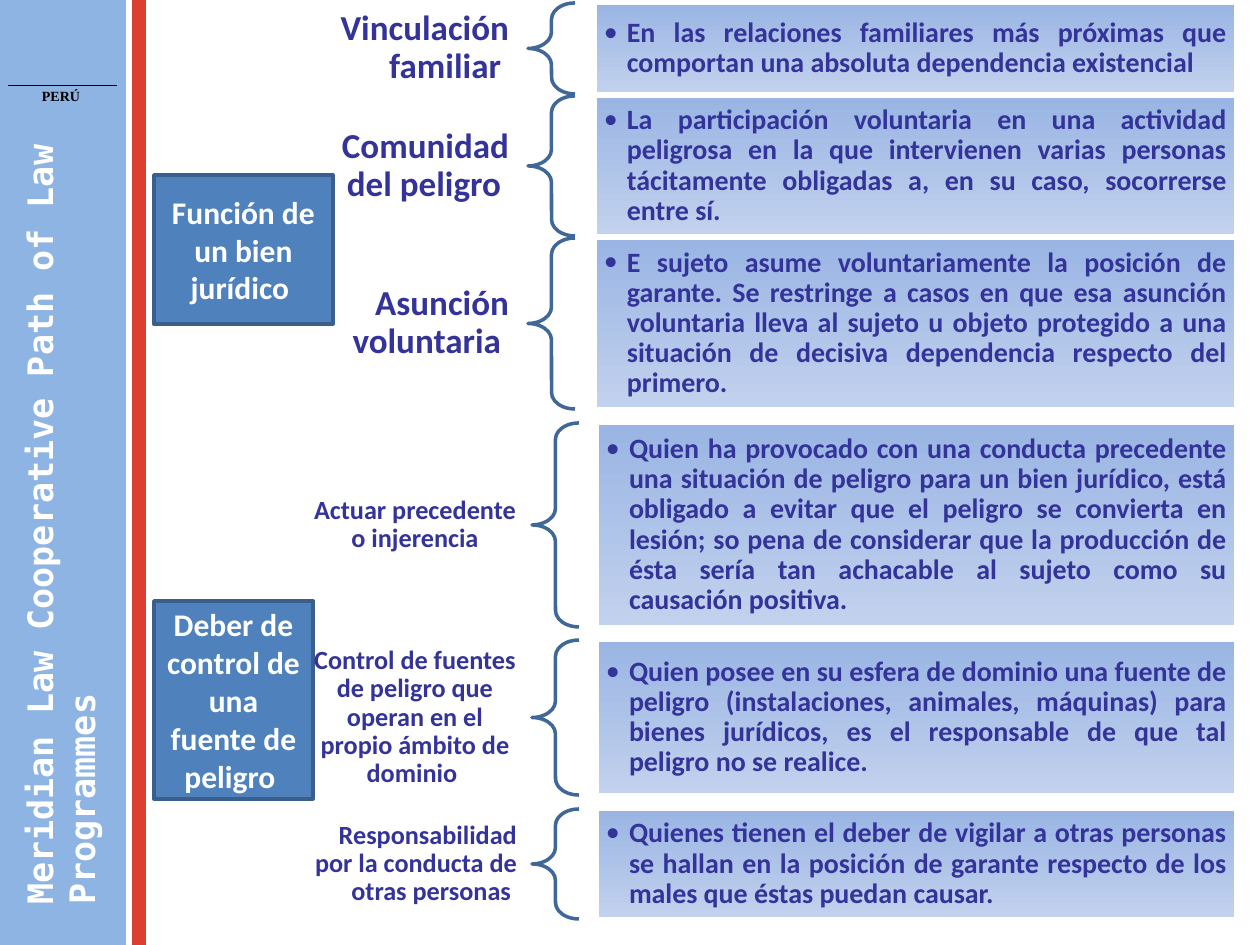
from lxml.etree import SubElement
from pptx import Presentation
from pptx.dml.color import RGBColor
from pptx.enum.shapes import MSO_CONNECTOR, MSO_SHAPE
from pptx.enum.text import MSO_ANCHOR, PP_ALIGN
from pptx.oxml.ns import qn
from pptx.util import Pt

PX = 914400 / 126
SLIDE_W, SLIDE_H = 1260, 945
INK, WHITE, BLACK = "333399", "FFFFFF", "000000"
SKY, RED, BLUE, BLUE_EDGE, BRACE = "8EB4E3", "DC3E32", "4F81BD", "3A5F8C", "3F6797"
PANEL_TOP, PANEL_BOTTOM = "9AB5E4", "C2D1ED"
LEFT, CENTER, RIGHT, JUSTIFY = PP_ALIGN.LEFT, PP_ALIGN.CENTER, PP_ALIGN.RIGHT, PP_ALIGN.JUSTIFY

ORGANIZATION = "Meridian Law Cooperative Path of Law Programmes"
COUNTRY = "PERÚ"

# Each group: duty box, columns as (left, width), label format,
# rows as (top, height, label height, label alignment, label, explanation)
GROUPS = [
    {
        "duty": "Función de un bien jurídico ",
        "duty_box": (154, 175, 179, 149),
        "label": (293, 236), "brace": (528, 47), "panel": (595, 641),
        "size": 20, "inset": (20, 8),
        "rows": [
            (3, 91, 91, RIGHT, "Vinculación familiar ",
             "En las relaciones familiares más próximas que comportan una absoluta "
             "dependencia existencial "),
            (96, 140, 91, RIGHT, "Comunidad del peligro ",
             "La participación voluntaria en una actividad peligrosa en la que "
             "intervienen varias personas tácitamente obligadas a, en su caso, "
             "socorrerse entre sí."),
            (238, 171, 91, RIGHT, "Asunción voluntaria ",
             "E sujeto asume voluntariamente la posición de garante. Se restringe a "
             "casos en que esa asunción voluntaria lleva al sujeto u objeto protegido "
             "a una situación de decisiva dependencia respecto del primero."),
        ],
    },
    {
        "duty": "Deber de control de una fuente de peligro ",
        "duty_box": (154, 601, 159, 198),
        "label": (298, 234), "brace": (532, 47), "panel": (597, 639),
        "size": 15, "inset": (15, 5),
        "rows": [
            (423, 204, 71, CENTER, "Actuar precedente o injerencia",
             "Quien ha provocado con una conducta precedente una situación de peligro "
             "para un bien jurídico, está obligado a evitar que el peligro se "
             "convierta en lesión; so pena de considerar que la producción de ésta "
             "sería tan achacable al sujeto como su causación positiva."),
            (640, 155, 155, CENTER,
             "Control de fuentes de peligro que operan en el propio ámbito de dominio ",
             "Quien posee en su esfera de dominio una fuente de peligro "
             "(instalaciones, animales, máquinas) para bienes jurídicos, es el "
             "responsable de que tal peligro no se realice."),
            (809, 110, 97, RIGHT, "Responsabilidad por la conducta de otras personas ",
             "Quienes tienen el deber de vigilar a otras personas se hallan en la "
             "posición de garante respecto de los males que éstas puedan causar."),
        ],
    },
]


def px(*lengths):
    return [round(length * PX) for length in lengths]


def rgb(color):
    return RGBColor.from_string(color)


def add_block(kind, box, line, fill=None):
    block = slide.shapes.add_shape(kind, *px(*box))
    block.shadow.inherit = False
    block.line.color.rgb = rgb(line)
    block.line.width = Pt(2)
    if fill is None:
        block.fill.background()
    elif isinstance(fill, tuple):
        block.fill.gradient()
        block.fill.gradient_angle = 270
        for stop, color in zip(block.fill.gradient_stops, fill):
            stop.color.rgb = rgb(color)
    else:
        block.fill.solid()
        block.fill.fore_color.rgb = rgb(fill)
    return block


def add_text_box(box):
    return slide.shapes.add_textbox(*px(*box))


def write(holder, text, *, size, color=INK, font="Calibri", align=CENTER,
          anchor=MSO_ANCHOR.MIDDLE, inset=(13, 6), spacing=None, bullet_indent=0, vert=None):
    frame = holder.text_frame
    frame.word_wrap = True
    frame.vertical_anchor = anchor
    frame.margin_left = frame.margin_right = px(inset[0])[0]
    frame.margin_top = frame.margin_bottom = px(inset[1])[0]
    if vert:
        frame._txBody.bodyPr.set("vert", vert)
    paragraph = frame.paragraphs[0]
    paragraph.alignment = align
    if spacing:
        paragraph.line_spacing = spacing
    if bullet_indent:
        props = paragraph._p.get_or_add_pPr()
        indent = px(bullet_indent)[0]
        props.set("marL", str(indent))
        props.set("indent", str(-indent))
        SubElement(props, qn("a:buFont")).set("typeface", font)
        SubElement(props, qn("a:buChar")).set("char", "•")
    run = paragraph.add_run()
    run.text = text
    run.font.name = font
    run.font.size = Pt(size)
    run.font.bold = True
    run.font.color.rgb = rgb(color)


deck = Presentation()
deck.slide_width, deck.slide_height = px(SLIDE_W, SLIDE_H)
slide = deck.slides.add_slide(deck.slide_layouts[6])

# Sidebar
add_block(MSO_SHAPE.RECTANGLE, (0, 0, 124, SLIDE_H), SKY, SKY)
write(add_text_box((26, 115, 68, 796)), ORGANIZATION, size=20, color=WHITE,
      font="DejaVu Sans Mono", align=LEFT, vert="vert270")
add_block(MSO_SHAPE.RECTANGLE, (134, 0, 10, SLIDE_H), RED, RED)
write(add_text_box((8, 82, 106, 30)), COUNTRY, size=8, color=BLACK,
      font="Times New Roman", anchor=MSO_ANCHOR.TOP)
rule = slide.shapes.add_connector(MSO_CONNECTOR.STRAIGHT, *px(8, 85, 117, 85))
rule.line.color.rgb = rgb(BLACK)
rule.line.width = Pt(0.25)
SubElement(rule._element.spPr, qn("a:effectLst"))

# Duty boxes
for group in GROUPS:
    duty = add_block(MSO_SHAPE.RECTANGLE, group["duty_box"], BLUE_EDGE, BLUE)
    write(duty, group["duty"], size=18, color=WHITE)

# Rows: label, brace and explanation panel
for group in GROUPS:
    label_x, label_w = group["label"]
    brace_x, brace_w = group["brace"]
    panel_x, panel_w = group["panel"]
    for top, height, label_h, align, label, explanation in group["rows"]:
        label_y = top + (height - label_h) / 2
        write(add_text_box((label_x, label_y, label_w, label_h)), label,
              size=group["size"], align=align, inset=group["inset"], spacing=0.9)
        brace = add_block(MSO_SHAPE.LEFT_BRACE, (brace_x, top, brace_w, height), BRACE)
        brace.adjustments[0] = 0.35
        panel = add_block(MSO_SHAPE.RECTANGLE, (panel_x, top, panel_w, height), WHITE,
                          (PANEL_TOP, PANEL_BOTTOM))
        write(panel, explanation, size=16, align=JUSTIFY, inset=(9, 9),
              spacing=0.9, bullet_indent=23)

deck.save("out.pptx")
